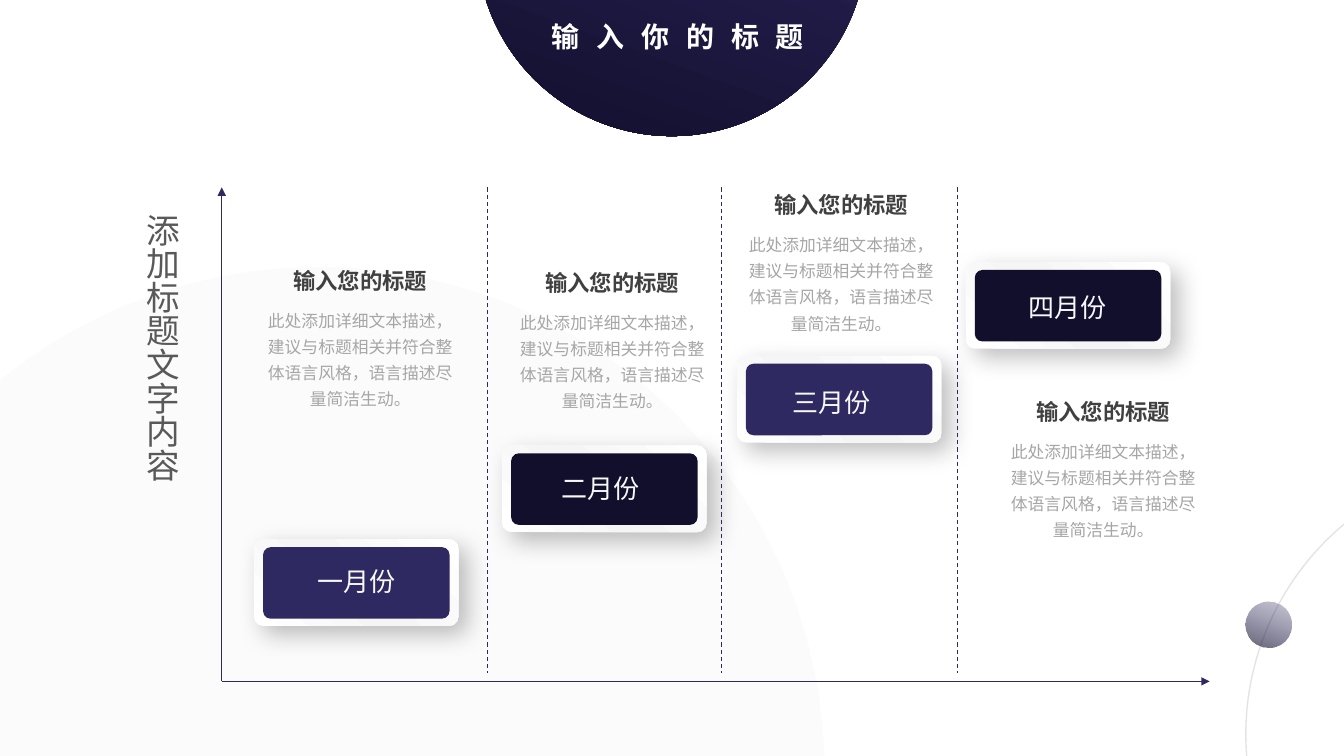
from lxml import etree
from pptx import Presentation
from pptx.dml.color import RGBColor
from pptx.enum import dml, shapes, text
from pptx.oxml.ns import qn
from pptx.util import Pt

FONT = "Noto Sans CJK SC"
INDIGO = RGBColor(0x2E, 0x29, 0x61)
MIDNIGHT = RGBColor(0x12, 0x0F, 0x2D)
WHITE = RGBColor(0xFF, 0xFF, 0xFF)
PEARL = RGBColor(0xF5, 0xF5, 0xF5)
MIST = RGBColor(0xF2, 0xF2, 0xF2)
LABEL_WHITE = RGBColor(0xF8, 0xF8, 0xF8)
HEADING_GREY = RGBColor(0x40, 0x40, 0x40)
AXIS_GREY = RGBColor(0x59, 0x59, 0x59)
PALE_GREY = RGBColor(0xA6, 0xA6, 0xA6)
BLACK = RGBColor(0, 0, 0)

DETAIL = "此处添加详细文本描述，建议与标题相关并符合整体语言风格，语言描述尽量简洁生动。"
ORIGIN_X, ORIGIN_Y, AXIS_TOP, AXIS_RIGHT = 158.4, 486.7, 133.9, 864
DIVIDERS = (348.5, 515.2, 684)
# name, colour, card corner, label corner, caption corner
MONTHS = (
    ("一月份", INDIGO, (181.4, 385.2), (197.3, 400.3), (181.4, 187.2)),
    ("二月份", MIDNIGHT, (358.6, 318.2), (371.5, 334.1), (361.4, 188.6)),
    ("三月份", INDIGO, (526.3, 254.2), (536.4, 272.2), (524.9, 133.2)),
    ("四月份", MIDNIGHT, (689.8, 187.2), (705.6, 204.5), (712.1, 280.8)),
)


def add_child(parent, tag, **attributes):
    child = etree.SubElement(parent, qn(tag))
    for name, value in attributes.items():
        child.set(name, str(value))
    return child


def add_colour(parent, colour, opacity=100):
    node = add_child(parent, "a:srgbClr", val=colour)
    if opacity < 100:
        add_child(node, "a:alpha", val=opacity * 1000)


def set_opacity(fill_parent, opacity):
    """Make the solid fill directly under a shape's properties or line see-through."""
    colour = fill_parent.find(qn("a:solidFill")).find(qn("a:srgbClr"))
    add_child(colour, "a:alpha", val=opacity * 1000)


def add_plain(page, kind, left, top, width, height):
    """Add a preset shape with no fill, line or shadow."""
    shape = page.shapes.add_shape(kind, Pt(left), Pt(top), Pt(width), Pt(height))
    shape.shadow.inherit = False
    shape.fill.background()
    shape.line.fill.background()
    return shape


def add_circle(page, left, top, size):
    return add_plain(page, shapes.MSO_SHAPE.OVAL, left, top, size, size)


def add_rounded(page, left, top, width, height):
    shape = add_plain(page, shapes.MSO_SHAPE.ROUNDED_RECTANGLE, left, top, width, height)
    shape.adjustments[0] = 0.106
    return shape


def fill_solid(shape, colour):
    shape.fill.solid()
    shape.fill.fore_color.rgb = colour


def fill_gradient(shape, clockwise, stops):
    """Fill with stops of (position, colour, opacity)."""
    shape.fill.gradient()
    shape.fill.gradient_angle = 360 - clockwise
    stop_list = shape.element.spPr.find(qn("a:gradFill")).find(qn("a:gsLst"))
    for old in list(stop_list):
        stop_list.remove(old)
    for position, colour, opacity in stops:
        add_colour(add_child(stop_list, "a:gs", pos=position * 1000), colour, opacity)


def add_soft_shadow(shape):
    effects = shape.element.spPr.find(qn("a:effectLst"))
    shadow = add_child(effects, "a:outerShdw", blurRad=Pt(18), dist=Pt(9),
                       dir=45 * 60000, algn="tl", rotWithShape=0)
    add_colour(shadow, BLACK, 25)


def add_line(page, start, end, dashed=False):
    """Draw a dashed divider, or an axis with an arrowhead at its end."""
    line = page.shapes.add_connector(shapes.MSO_CONNECTOR.STRAIGHT,
                                     *(Pt(value) for value in start + end))
    line.line.color.rgb = INDIGO
    line.line.width = Pt(0.75)
    if dashed:
        line.line.dash_style = dml.MSO_LINE.DASH
    else:
        add_child(line.line._get_or_add_ln(), "a:tailEnd", type="triangle")
    add_child(line.element.spPr, "a:effectLst")


def add_text(page, words, left, top, width, height, size, colour,
             bold=False, align=text.PP_ALIGN.CENTER):
    box = page.shapes.add_textbox(Pt(left), Pt(top), Pt(width), Pt(height))
    box.text_frame.word_wrap = True
    para = box.text_frame.paragraphs[0]
    para.alignment = align
    span = para.add_run()
    span.text = words
    span.font.size = Pt(size)
    span.font.bold = bold
    span.font.color.rgb = colour
    span.font.name = FONT
    add_child(span.font._element, "a:ea", typeface=FONT)
    return box


def add_backdrop(page):
    header = add_circle(page, 340.6, -181.4, 278.6)
    fill_gradient(header, 110, ((0, INDIGO, 100), (100, MIDNIGHT, 100)))

    title = add_text(page, "输入你的标题", 326.9, 13.7, 314.6, 36.7, 20, WHITE, bold=True)
    frame = title.text_frame
    frame.word_wrap = False
    frame.margin_left = frame.margin_right = frame.margin_top = frame.margin_bottom = 0
    frame.paragraphs[0].runs[0].font._element.set("spc", "1200")

    orbit = add_circle(page, 889.9, 329, 391)
    orbit.line.color.rgb = PALE_GREY
    orbit.line.width = Pt(1)
    set_opacity(orbit.line._get_or_add_ln(), 30)

    planet = add_circle(page, 889.9, 429.8, 32.6)
    fill_gradient(planet, 110, ((0, INDIGO, 26), (100, MIDNIGHT, 65)))

    disc = add_circle(page, -133.2, 190.8, 722.2)
    fill_solid(disc, MIST)
    set_opacity(disc.element.spPr, 29)


def add_axes(page):
    add_line(page, (ORIGIN_X, ORIGIN_Y), (ORIGIN_X, AXIS_TOP))
    add_line(page, (ORIGIN_X, ORIGIN_Y), (AXIS_RIGHT, ORIGIN_Y))
    name = add_text(page, "添加标题文字内容", 91.4, 147.6, 48.2, 223.9, 24, AXIS_GREY,
                    align=text.PP_ALIGN.LEFT)
    frame = name.text_frame
    frame.margin_left = frame.margin_right = Pt(9.4)
    frame.margin_top = frame.margin_bottom = Pt(5)
    frame._txBody.bodyPr.set("vert", "eaVert")


def add_month_card(page, name, colour, corner, label_corner):
    left, top = corner
    frame = add_rounded(page, left, top, 146, 61.9)
    fill_gradient(frame, 315, ((0, WHITE, 100), (47, PEARL, 100), (100, WHITE, 100)))
    add_soft_shadow(frame)
    fill_solid(add_rounded(page, left + 6.5, top + 5.6, 133.2, 51.1), colour)
    add_text(page, name, *label_corner, 114.5, 33.8, 18.6, LABEL_WHITE)


def add_caption(page, left, top):
    add_text(page, "输入您的标题", left, top, 151.9, 26.6, 16, HEADING_GREY, bold=True)
    detail = add_text(page, DETAIL, left, top + 26.6, 151.9, 82.8, 12, PALE_GREY)
    detail.text_frame.paragraphs[0].line_spacing = 1.3


def main():
    deck = Presentation()
    deck.slide_width, deck.slide_height = Pt(960), Pt(540)
    page = deck.slides.add_slide(deck.slide_layouts[6])
    add_backdrop(page)
    add_axes(page)
    for name, colour, card, label, caption in MONTHS:
        add_month_card(page, name, colour, card, label)
        add_caption(page, *caption)
    for x in DIVIDERS:
        add_line(page, (x, AXIS_TOP), (x, 481), dashed=True)
    deck.save("out.pptx")


if __name__ == "__main__":
    main()
